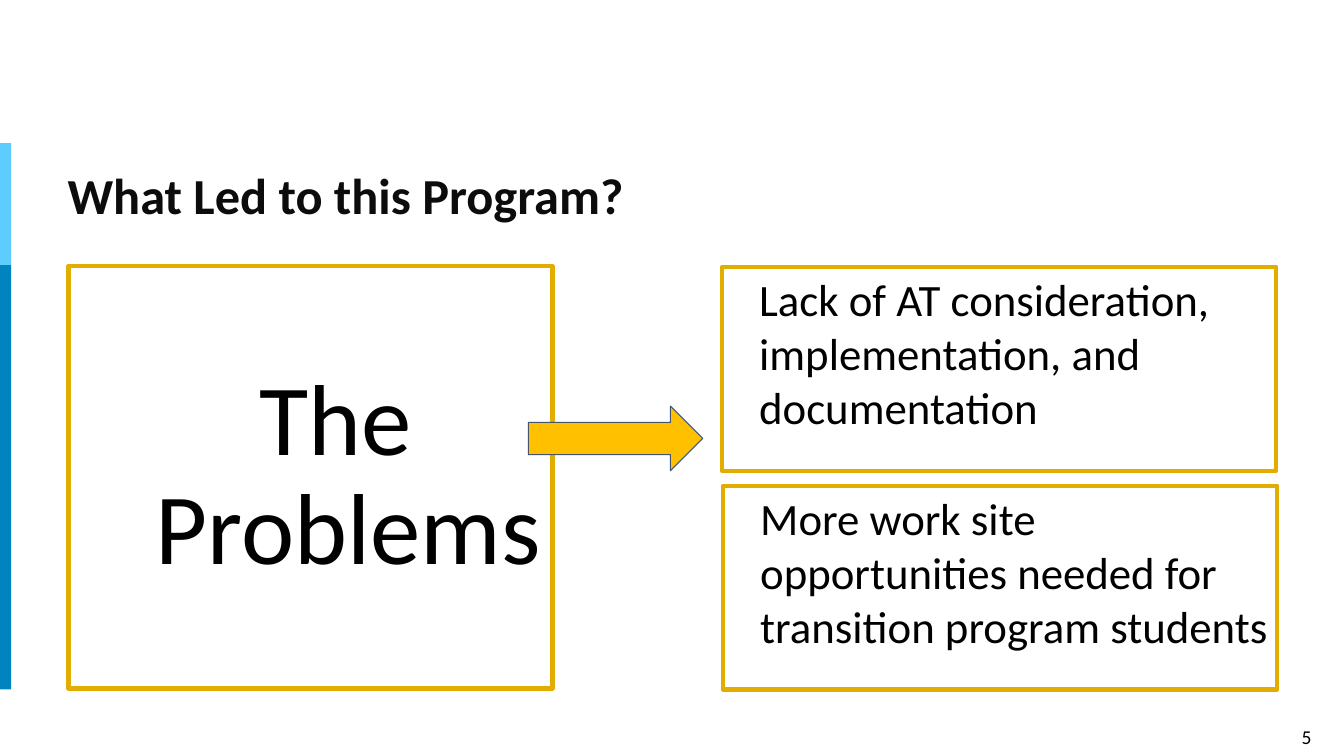
from pptx import Presentation
from pptx.dml.color import RGBColor
from pptx.enum.shapes import MSO_SHAPE as Preset
from pptx.enum.text import MSO_ANCHOR as Anchor, PP_ALIGN as Align
from pptx.util import Pt

PX = 9144
FONT = "Calibri"
COLORS = {
    "white": "FFFFFF",
    "black": "000000",
    "title": "0C0C0C",
    "sky": "5DCDFF",
    "blue": "0083BF",
    "frame": "E2AC00",
    "arrow": "FFC000",
    "arrow_edge": "44546A",
}


def rgb(name):
    return RGBColor.from_string(COLORS[name])


def add_block(slide, box, fill=None, edge=None, edge_width=0.75, preset=Preset.RECTANGLE):
    block = slide.shapes.add_shape(preset, *(length * PX for length in box))
    block.shadow.inherit = False
    if fill:
        block.fill.solid()
        block.fill.fore_color.rgb = rgb(fill)
    else:
        block.fill.background()
    if edge:
        block.line.color.rgb = rgb(edge)
        block.line.width = Pt(edge_width)
    else:
        block.line.fill.background()
    return block


def write(block, wording, size, color="black", bold=False, align=Align.LEFT,
          anchor=Anchor.TOP, insets=(10, 5, 10, 5), indent=(0, 0), spacing=1.0):
    frame = block.text_frame
    frame.word_wrap = True
    frame.vertical_anchor = anchor
    (frame.margin_left, frame.margin_top,
     frame.margin_right, frame.margin_bottom) = (inset * PX for inset in insets)
    paragraph = frame.paragraphs[0]
    paragraph.alignment = align
    paragraph.line_spacing = spacing
    properties = paragraph._p.get_or_add_pPr()
    for key, length in zip(("marL", "indent"), indent):
        properties.set(key, str(length * PX))
    run = paragraph.add_run()
    run.text = wording
    run.font.name = FONT
    run.font.size = Pt(size)
    run.font.bold = bold
    run.font.color.rgb = rgb(color)


def add_side_bar(slide, left, top, width, height):
    sky_height = 121
    add_block(slide, (left, top, width, sky_height), "sky")
    add_block(slide, (left, top + sky_height, width, height - sky_height), "blue")


def add_title(slide, box):
    title = add_block(slide, box, "white")
    write(title, "What Led to this Program?", 36, "title", bold=True,
          anchor=Anchor.MIDDLE, insets=(0, 20, 10, 5), spacing=0.8)


def add_topic(slide, box):
    topic = add_block(slide, box, edge="frame", edge_width=3)
    write(topic, "The Problems", 72, align=Align.CENTER, anchor=Anchor.MIDDLE,
          insets=(30, 5, 5, 5), indent=(50, -25), spacing=0.9)


def add_problem(slide, box, wording):
    problem = add_block(slide, box, edge="frame", edge_width=3)
    write(problem, wording, 32, insets=(30, 5, 5, 5), indent=(7, 0))


def add_page_number(slide, box):
    write(add_block(slide, box), "5", 14, align=Align.CENTER)


def build_problems_slide(deck):
    slide = deck.slides.add_slide(deck.slide_layouts[6])
    add_page_number(slide, (1263, 714, 66, 34))
    add_side_bar(slide, -3, 142, 14, 542)
    add_title(slide, (67, 128, 1201, 126))
    add_topic(slide, (68, 264, 480, 419))
    add_block(slide, (524, 403, 173, 64), "arrow", "arrow_edge", preset=Preset.RIGHT_ARROW)
    add_problem(slide, (716, 265, 550, 202),
                "Lack of AT consideration, implementation, and documentation")
    add_problem(slide, (717, 482, 550, 202),
                "More work site opportunities needed for transition program students")


def main():
    deck = Presentation()
    deck.slide_width = 1333 * PX
    deck.slide_height = 750 * PX
    build_problems_slide(deck)
    deck.save("out.pptx")


if __name__ == "__main__":
    main()
